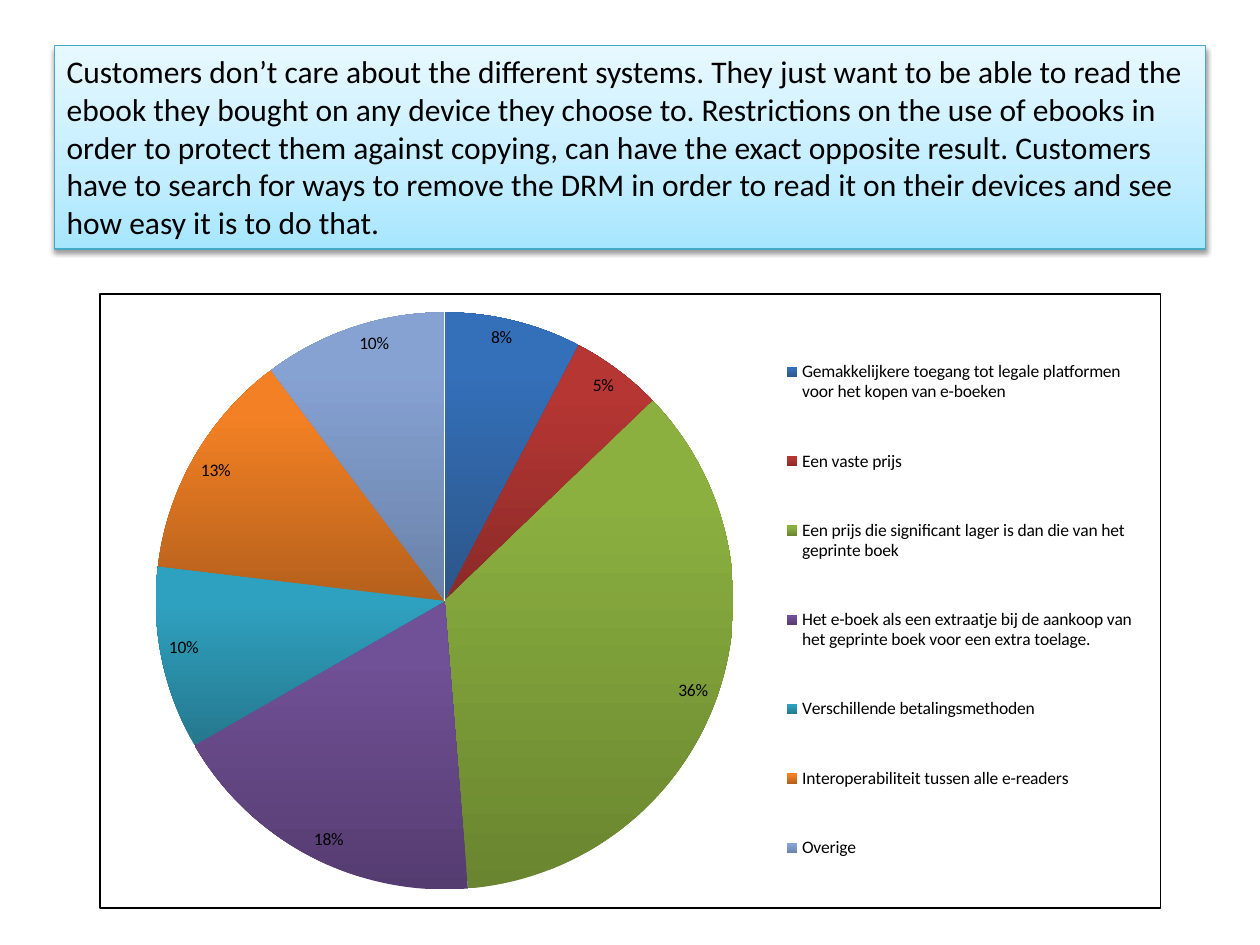
import copy

import lxml.etree
import pptx
import pptx.chart.data
import pptx.dml.color
import pptx.enum.chart
import pptx.enum.text
import pptx.oxml
import pptx.oxml.ns
import pptx.util

Pt = pptx.util.Pt
RGBColor = pptx.dml.color.RGBColor
qn = pptx.oxml.ns.qn

BLACK = RGBColor(0x00, 0x00, 0x00)
TEAL = RGBColor(0x46, 0xAA, 0xC5)
SKY = RGBColor(0xA7, 0xE6, 0xFF)
PALE_SKY = RGBColor(0xC1, 0xED, 0xFF)
ICE = RGBColor(0xE7, 0xF8, 0xFF)
FONT = "Calibri"

STATEMENT = (
    "Customers don’t care about the different systems. They just want to be able "
    "to read the ebook they bought on any device they choose to. Restrictions on "
    "the use of ebooks in order to protect them against copying, can have the exact "
    "opposite result. Customers have to search for ways to remove the DRM in order "
    "to read it on their devices and see how easy it is to do that."
)

ANSWERS = [
    ("Gemakkelijkere toegang tot legale platformen voor het kopen van e-boeken",
     3, " 8%", RGBColor(0x2C, 0x56, 0x88), RGBColor(0x34, 0x6F, 0xB9)),
    ("Een vaste prijs",
     2, "5%", RGBColor(0x8A, 0x2A, 0x28), RGBColor(0xB5, 0x36, 0x33)),
    ("Een prijs die significant lager is dan die van het geprinte boek",
     14, "36%", RGBColor(0x69, 0x85, 0x2F), RGBColor(0x8B, 0xB0, 0x40)),
    ("Het e-boek als een extraatje bij de aankoop van het geprinte boek "
     "voor een extra toelage.",
     7, "18%", RGBColor(0x55, 0x3C, 0x70), RGBColor(0x70, 0x50, 0x96)),
    ("Verschillende betalingsmethoden",
     4, "10%", RGBColor(0x25, 0x78, 0x8E), RGBColor(0x2F, 0xA1, 0xC0)),
    ("Interoperabiliteit tussen alle e-readers",
     5, "13%", RGBColor(0xB4, 0x60, 0x1C), RGBColor(0xF3, 0x80, 0x24)),
    ("Overige",
     4, " 10%", RGBColor(0x6A, 0x82, 0xA9), RGBColor(0x86, 0xA2, 0xD3)),
]


def fill_upward(fill, bottom, top, end=1):
    fill.gradient()
    fill.gradient_angle = 90
    for stop, position, color in zip(fill.gradient_stops, (0, end), (bottom, top)):
        stop.position = position
        stop.color.rgb = color


def add_middle_stop(shape, position, color):
    stops = shape._element.spPr.find(".//" + qn("a:gsLst"))
    stops.insert(1, copy.deepcopy(stops[0]))
    stop = shape.fill.gradient_stops[1]
    stop.position = position
    stop.color.rgb = color


def add_shadow(shape):
    shape.shadow.inherit = False
    effects = shape._element.spPr.find(qn("a:effectLst"))
    shadow = lxml.etree.SubElement(
        effects, qn("a:outerShdw"), blurRad=str(Pt(3.1)), dist=str(Pt(1.6)),
        dir="5400000", rotWithShape="0")
    color = lxml.etree.SubElement(shadow, qn("a:srgbClr"), val=str(BLACK))
    lxml.etree.SubElement(color, qn("a:alpha"), val="38000")


def add_statement(s):
    sp = s.shapes.add_shape(1, Pt(31), Pt(26.2), Pt(658), Pt(116.2))
    fill_upward(sp.fill, SKY, ICE)
    add_middle_stop(sp, 0.35, PALE_SKY)
    sp.line.color.rgb = TEAL
    sp.line.width = Pt(0.75)
    add_shadow(sp)
    tf = sp.text_frame
    tf.word_wrap = True
    tf.vertical_anchor = pptx.enum.text.MSO_ANCHOR.TOP
    p = tf.paragraphs[0]
    p.text = STATEMENT
    p.alignment = pptx.enum.text.PP_ALIGN.LEFT
    p.font.name = FONT
    p.font.size = Pt(18)
    p.font.color.rgb = BLACK


def add_layout(parent, x, y, w, h, inner=False):
    for old in parent.findall(qn("c:layout")):
        parent.remove(old)
    layout = lxml.etree.Element(qn("c:layout"))
    manual = lxml.etree.SubElement(layout, qn("c:manualLayout"))
    settings = [("layoutTarget", "inner")] if inner else []
    settings += [("xMode", "edge"), ("yMode", "edge"),
                 ("x", x), ("y", y), ("w", w), ("h", h)]
    for tag, value in settings:
        lxml.etree.SubElement(manual, qn("c:" + tag), val=str(value))
    parent.insert(0 if inner else 1, layout)


def add_border(chart):
    border = pptx.oxml.parse_xml(
        f'<c:spPr {pptx.oxml.ns.nsdecls("c", "a")}><a:noFill/>'
        f'<a:ln w="{Pt(0.75)}"><a:solidFill><a:srgbClr val="{BLACK}"/>'
        '</a:solidFill></a:ln></c:spPr>')
    chart._chartSpace.find(qn("c:chart")).addnext(border)


def label_point(point, text):
    label = point.data_label
    p = label.text_frame.paragraphs[0]
    p.text = text
    p.font.name = FONT
    p.font.size = Pt(10)
    p.font.color.rgb = BLACK
    label.position = pptx.enum.chart.XL_LABEL_POSITION.INSIDE_END


def add_answers_pie(s):
    data = pptx.chart.data.CategoryChartData()
    data.categories = [answer[0] for answer in ANSWERS]
    data.add_series("Series 1", [answer[1] for answer in ANSWERS])
    chart = s.shapes.add_chart(
        pptx.enum.chart.XL_CHART_TYPE.PIE,
        Pt(56.7), Pt(167.6), Pt(607), Pt(351.6), data).chart
    chart.has_title = False
    chart.font.name = FONT
    chart.font.size = Pt(10)
    chart.font.color.rgb = BLACK
    add_border(chart)

    chart.has_legend = True
    chart.legend.position = pptx.enum.chart.XL_LEGEND_POSITION.RIGHT
    chart.legend.include_in_layout = False
    add_layout(chart.legend._element, 0.64, 0.03, 0.34, 0.97)
    add_layout(chart._chartSpace.find(".//" + qn("c:plotArea")),
               0.05, 0.03, 0.55, 0.94, inner=True)

    plot = chart.plots[0]
    plot.vary_by_categories = True
    series = plot.series[0]
    labels = series.data_labels
    labels.show_value = True
    labels.show_percentage = True
    labels.position = pptx.enum.chart.XL_LABEL_POSITION.INSIDE_END
    for i, (_, _, share, dark, light) in enumerate(ANSWERS):
        point = series.points[i]
        fill_upward(point.format.fill, dark, light, end=0.8)
        label_point(point, share)
    for flag in series._element.iter(qn("c:showPercent")):
        flag.set("val", "1")


def main():
    prs = pptx.Presentation()
    prs.slide_width = Pt(720)
    prs.slide_height = Pt(540)
    s = prs.slides.add_slide(prs.slide_layouts[6])
    add_statement(s)
    add_answers_pie(s)
    prs.save("out.pptx")


if __name__ == "__main__":
    main()
